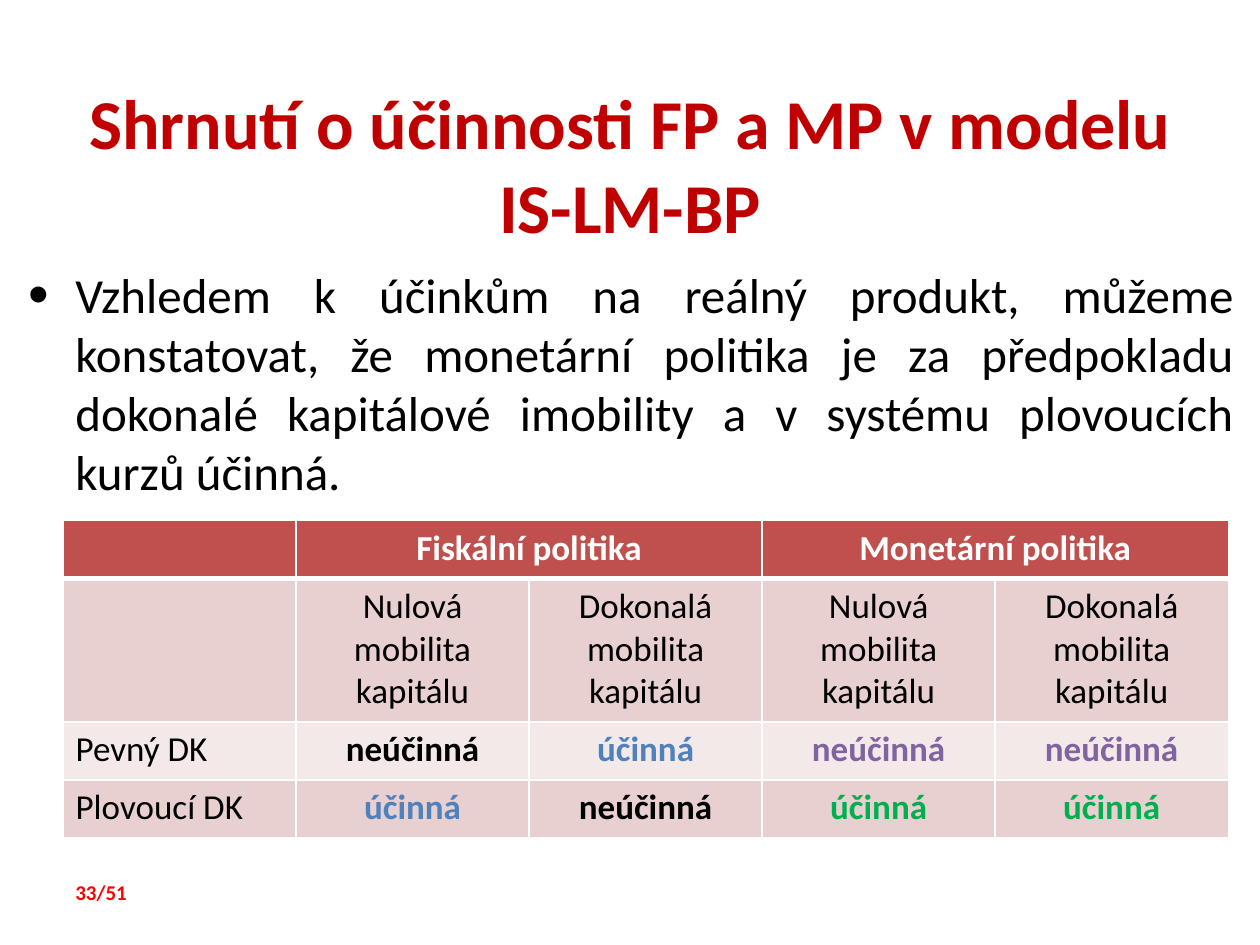
import pptx
import pptx.dml.color
import pptx.enum.text
import pptx.oxml
import pptx.oxml.ns
import pptx.util

Pt = pptx.util.Pt
ALIGN = pptx.enum.text.PP_ALIGN
ANCHOR = pptx.enum.text.MSO_ANCHOR
NS = pptx.oxml.ns.nsdecls("a")
FONT = "Calibri"
BLACK, WHITE, BLUE = "000000", "FFFFFF", "4F81BD"
PURPLE, GREEN = "8064A2", "00B050"
HEADER, DARK_BAND, LIGHT_BAND = "C0504D", "E8D0D0", "F4E9E9"

TITLE = "Shrnutí o účinnosti FP a MP v modelu IS-LM-BP"
BODY = (
    "Vzhledem k účinkům na reálný produkt, můžeme konstatovat, "
    "že monetární politika je za předpokladu dokonalé kapitálové "
    "imobility a v systému plovoucích kurzů účinná."
)
MOBILITY = ["Nulová mobilita kapitálu", "Dokonalá mobilita kapitálu"]
RESULTS = [
    ("Pevný DK", LIGHT_BAND, [("neúčinná", BLACK), ("účinná", BLUE),
                              ("neúčinná", PURPLE), ("neúčinná", PURPLE)]),
    ("Plovoucí DK", DARK_BAND, [("účinná", BLUE), ("neúčinná", BLACK),
                                ("účinná", GREEN), ("účinná", GREEN)]),
]


def rgb(value):
    """Return the colour for a hex string."""
    return pptx.dml.color.RGBColor.from_string(value)


def add_run(p, text, size, color=BLACK, bold=False):
    """Add one formatted run to a paragraph."""
    r = p.add_run()
    r.text = text
    r.font.name = FONT
    r.font.size = Pt(size)
    r.font.bold = bold
    r.font.color.rgb = rgb(color)


def add_text(s, box, text, size, color=BLACK, bold=False,
             align=ALIGN.LEFT, anchor=ANCHOR.TOP):
    """Add a wrapping text box and return its paragraph."""
    tf = s.shapes.add_textbox(*map(Pt, box)).text_frame
    tf.word_wrap = True
    tf.vertical_anchor = anchor
    p = tf.paragraphs[0]
    p.alignment = align
    add_run(p, text, size, color, bold)
    return p


def add_bullet(p, indent, hanging, tab):
    """Give a paragraph a round bullet, a hanging indent and a tab stop."""
    pPr = p._p.get_or_add_pPr()
    pPr.set("marL", str(Pt(indent)))
    pPr.set("indent", str(-Pt(hanging)))
    for xml in (
        f'<a:buClr {NS}><a:srgbClr val="{BLACK}"/></a:buClr>',
        f'<a:buSzPct {NS} val="120000"/>',
        f'<a:buFont {NS} typeface="Arial"/>',
        f'<a:buChar {NS} char="•"/>',
        f'<a:tabLst {NS}><a:tab pos="{Pt(tab)}" algn="l"/></a:tabLst>',
    ):
        pPr.append(pptx.oxml.parse_xml(xml))


def style_cell(cell, fill, bottom=1):
    """Set the white borders and the fill of a cell."""
    tcPr = cell._tc.get_or_add_tcPr()
    for side, width in (("L", 1), ("R", 1), ("T", 1), ("B", bottom)):
        tcPr.append(pptx.oxml.parse_xml(
            f'<a:ln{side} {NS} w="{Pt(width)}"><a:solidFill>'
            f'<a:srgbClr val="{WHITE}"/></a:solidFill></a:ln{side}>'))
    cell.fill.solid()
    cell.fill.fore_color.rgb = rgb(fill)


def fill_cell(cell, text, color=BLACK, bold=False, align=ALIGN.CENTER):
    """Write the text of a cell."""
    p = cell.text_frame.paragraphs[0]
    p.alignment = align
    add_run(p, text, 20, color, bold)


def add_policy_table(s):
    """Add the table of policy effectiveness."""
    heights = [33.12, 82.08, 33.12, 33.12]
    table = s.shapes.add_table(
        4, 5, Pt(36), Pt(297.5), Pt(666), Pt(sum(heights))).table
    for column in table.columns:
        column.width = Pt(133.2)
    fills = [HEADER, DARK_BAND] + [fill for _, fill, _ in RESULTS]
    for i, (height, fill) in enumerate(zip(heights, fills)):
        table.rows[i].height = Pt(height)
        for cell in table.rows[i].cells:
            style_cell(cell, fill, bottom=3 if i == 0 else 1)
    for col, policy in ((1, "Fiskální politika"), (3, "Monetární politika")):
        table.cell(0, col).merge(table.cell(0, col + 1))
        fill_cell(table.cell(0, col), policy, WHITE, True)
        for offset, text in enumerate(MOBILITY):
            fill_cell(table.cell(1, col + offset), text)
    for row, (regime, _, results) in enumerate(RESULTS, 2):
        fill_cell(table.cell(row, 0), regime, align=ALIGN.LEFT)
        for col, (text, color) in enumerate(results, 1):
            fill_cell(table.cell(row, col), text, color, True)


def main():
    """Build and save the slide."""
    prs = pptx.Presentation()
    prs.slide_width, prs.slide_height = Pt(720), Pt(540)
    s = prs.slides.add_slide(prs.slide_layouts[6])
    add_text(s, (36, 59, 648, 68.4), TITLE, 40, "C00000", True,
             ALIGN.CENTER, ANCHOR.MIDDLE)
    p = add_text(s, (0, 147.6, 712, 392.4), BODY, 28, align=ALIGN.JUSTIFY)
    add_bullet(p, indent=36, hanging=27, tab=18)
    p.space_after = Pt(12)
    add_text(s, (36, 499, 66, 21.6), "33/51", 12, "FF0000", True)
    add_policy_table(s)
    prs.save("out.pptx")


if __name__ == "__main__":
    main()
